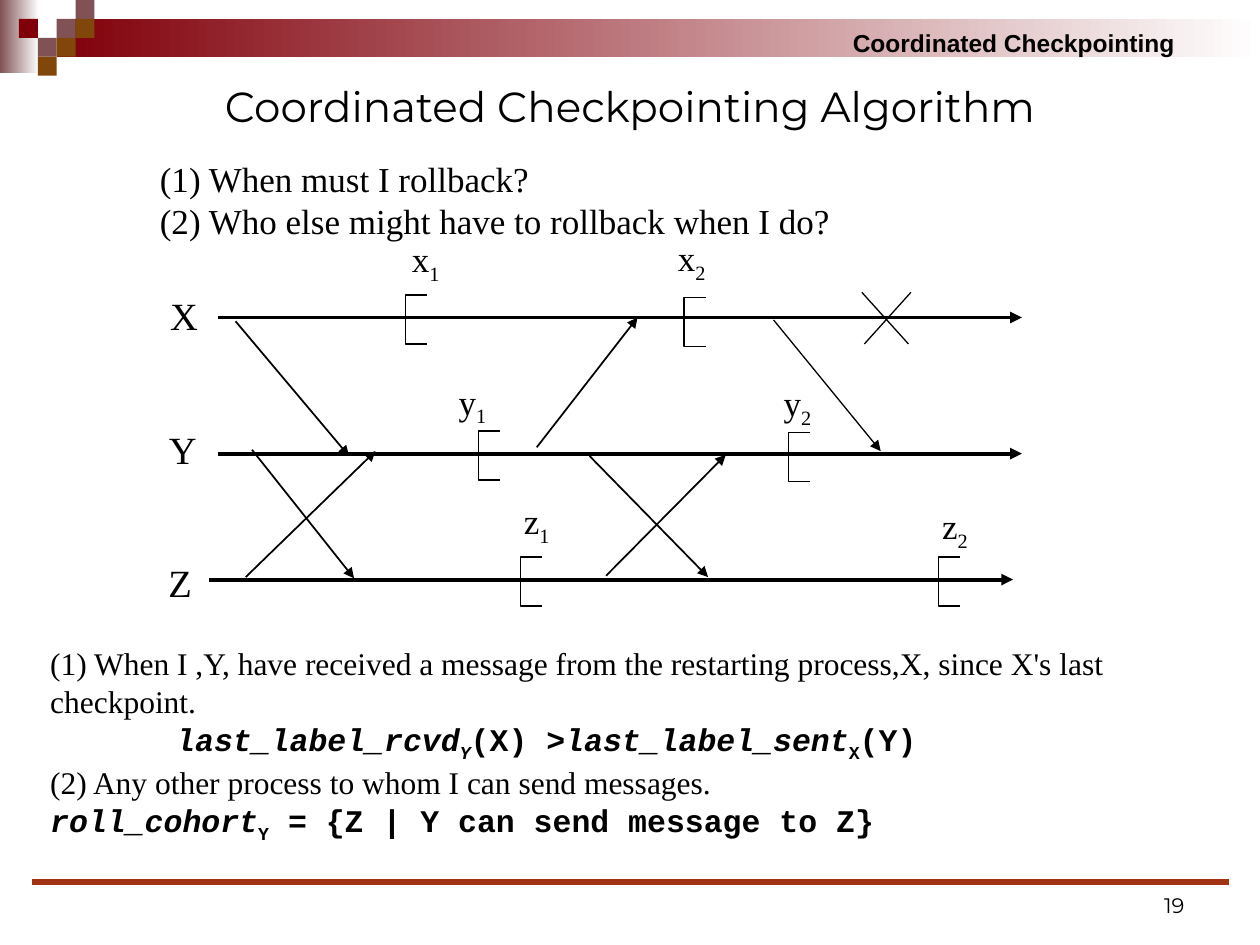
import pptx
import pptx.util
import pptx.dml.color
import pptx.enum.shapes
import pptx.enum.text
from pptx.oxml.xmlchemy import OxmlElement

Inches, Pt = pptx.util.Inches, pptx.util.Pt
ALIGN, ANCHOR = pptx.enum.text.PP_ALIGN, pptx.enum.text.MSO_ANCHOR
RECT = pptx.enum.shapes.MSO_SHAPE.RECTANGLE
STRAIGHT = pptx.enum.shapes.MSO_CONNECTOR.STRAIGHT
SERIF, MONO, SANS = "Times New Roman", "Courier New", "Montserrat"

# Content: header
TITLE = "Coordinated Checkpointing Algorithm"
BARS = [((0, 0, 0.31, 0.58), "805255"), ((0.45, 0.15, 9.55, 0.3), "80000A")]
STEP = 0.15
TILES = [(3, 1, "805255"), (4, 0, "805255"), (4, 1, "81460A"), (2, 2, "805255"),
         (1, 1, "80000A"), (3, 2, "81460A"), (2, 3, "81460A")]  # column, row

# Content: text, each run as (text, font, bold, italic, subscript)
ASKS = ["(1) When must I rollback?", "(2) Who else might have to rollback when I do?"]
RULES = [
    (0, [("(1) When I ,Y, have received a message from the restarting process,X, "
          "since X's last checkpoint.", SERIF, False, False, False)]),
    (1, [("last_label_rcvd", MONO, True, True, False), ("Y", MONO, True, True, True),
         ("(X) >", MONO, True, False, False), ("last_label_sent", MONO, True, True, False),
         ("X", MONO, True, False, True), ("(Y)", MONO, True, False, False)]),
    (0, [("(2) Any other process to whom I can send messages.", SERIF, False, False, False)]),
    (0, [("roll_cohort", MONO, True, True, False), ("Y", MONO, True, False, True),
         (" = {Z | Y can send message to Z}", MONO, True, False, False)]),
]

# Content: diagram
AXES = [("X", 1.31, 2.32, 1.73, 2.52), ("Y", 1.3, 3.38, 1.73, 3.6),
        ("Z", 1.28, 4.44, 1.66, 4.6)]  # name, label left and top, line start
SPAN = 6.38
MARKS = [("x", "1", 3.23, 1.91, 3.22, 2.34), ("x", "2", 5.34, 1.9, 5.43, 2.36),
         ("y", "1", 3.6, 3.04, 3.8, 3.42), ("y", "2", 6.18, 3.05, 6.26, 3.43),
         ("z", "1", 4.11, 3.99, 4.13, 4.42), ("z", "2", 7.43, 4.03, 7.45, 4.42)]
SENDS = [(1.95, 4.58, 2.98, 3.58, 1), (4.26, 3.55, 5.06, 2.52, 1),
         (1.87, 2.55, 2.77, 3.62, 1), (2, 3.57, 2.81, 4.59, 1),
         (4.68, 3.62, 5.62, 4.58, 1), (4.81, 4.57, 5.76, 3.61, 1),
         (6.14, 2.54, 6.99, 3.58, 0.75)]
CROSS = [(7.23, 2.32, 6.86, 2.73), (6.84, 2.32, 7.21, 2.73)]


def color(code):
    return pptx.dml.color.RGBColor.from_string(code)


def style(font, name, size, bold=False, italic=False):
    font.name, font.size, font.bold, font.italic = name, Pt(size), bold, italic
    font.color.rgb = color("000000")


def rect(box, fill, fade=False):
    shape = slide.shapes.add_shape(RECT, *map(Inches, box))
    shape.shadow.inherit = False
    shape.line.fill.background()
    if fade:
        shape.fill.gradient()
        shape.fill.gradient_angle = 0
        for stop, code, spot in zip(shape.fill.gradient_stops, (fill, "FFFFFF"), (0, 1)):
            stop.color.rgb, stop.position = color(code), spot
    else:
        shape.fill.solid()
        shape.fill.fore_color.rgb = color(fill)


def line(x1, y1, x2, y2, width, arrow=False, code="000000"):
    link = slide.shapes.add_connector(STRAIGHT, *map(Inches, (x1, y1, x2, y2)))
    link.line.width = Pt(width)
    link.line.color.rgb = color(code)
    if arrow:
        tail = OxmlElement("a:tailEnd")
        tail.set("type", "triangle")
        link.line._get_or_add_ln().append(tail)
    link._element.spPr.append(OxmlElement("a:effectLst"))


def text(box, anchor=ANCHOR.MIDDLE, wrap=True, inset=True):
    frame = slide.shapes.add_textbox(*map(Inches, box)).text_frame
    frame.word_wrap, frame.vertical_anchor = wrap, anchor
    if not inset:
        frame.margin_left = frame.margin_right = 0
        frame.margin_top = frame.margin_bottom = 0
    return frame


def lower(run):
    run._r.get_or_add_rPr().set("baseline", "-25000")


def label(name, x, y, size, sub=""):
    part = text((x, y, 0.3, size / 60), inset=False).paragraphs[0]
    part.alignment = ALIGN.CENTER
    part.add_run().text = name
    if sub:
        run = part.add_run()
        run.text = sub
        lower(run)
    style(part.font, SERIF, size)


deck = pptx.Presentation()
deck.slide_width, deck.slide_height = Inches(10), Inches(7.5)
slide = deck.slides.add_slide(deck.slide_layouts[5])

# Header and footer
for box, fill in BARS:
    rect(box, fill, fade=True)
for col, row, fill in TILES:
    rect((col * STEP, row * STEP, STEP, STEP), fill)
line(0.25, 7, 9.75, 7, 3, code="A13214")

part = text((6.67, 0.17, 2.83, 0.33), ANCHOR.TOP).paragraphs[0]
part.text = "Coordinated Checkpointing"
style(part.font, "Arial", 14, bold=True)

part = text((7.17, 6.83, 2.33, 0.5), ANCHOR.BOTTOM).paragraphs[0]
part.text, part.alignment = "19", ALIGN.RIGHT
style(part.font, SANS, 12)

# Title
title = slide.shapes.title
title.left, title.top, title.width, title.height = map(Inches, (0.5, 0.5, 9, 0.67))
frame = title.text_frame
frame.text, frame.vertical_anchor = TITLE, ANCHOR.MIDDLE
frame.auto_size = pptx.enum.text.MSO_AUTO_SIZE.NONE
frame.paragraphs[0].alignment = ALIGN.CENTER
style(frame.paragraphs[0].font, SANS, 24)

# Questions
frame = text((1.17, 1.17, 5.59, 0.83), wrap=False)
frame.text = "\n".join(ASKS)
for part in frame.paragraphs:
    style(part.font, SERIF, 20)

# Answers
frame = text((0.3, 5.1, 9.45, 1.61))
for i, (indent, runs) in enumerate(RULES):
    part = frame.add_paragraph() if i else frame.paragraphs[0]
    if indent:
        part.level = 2
        part._p.get_or_add_pPr().set("marL", str(Inches(indent)))
    for words, name, bold, italic, sub in runs:
        run = part.add_run()
        run.text = words
        style(run.font, name, 18, bold, italic)
        if sub:
            lower(run)

# Process lines
for name, x, y, start, level in AXES:
    line(start, level, start + SPAN, level, 2.25, arrow=True)
    label(name, x, y, 22)

# Checkpoints
for name, sub, x, y, left, top in MARKS:
    label(name, x, y, 20, sub)
    right, base = left + 0.17, top + 0.39
    pen = slide.shapes.build_freeform(Inches(right), Inches(top))
    pen.add_line_segments([(Inches(a), Inches(b)) for a, b in
                           ((left, top), (left, base), (right, base))], close=False)
    hook = pen.convert_to_shape()
    hook.shadow.inherit = False
    hook.fill.background()
    hook.line.color.rgb, hook.line.width = color("000000"), Pt(0.75)

# Messages and failure
for *ends, width in SENDS:
    line(*ends, width, arrow=True)
for ends in CROSS:
    line(*ends, 0.75)

deck.save("out.pptx")
